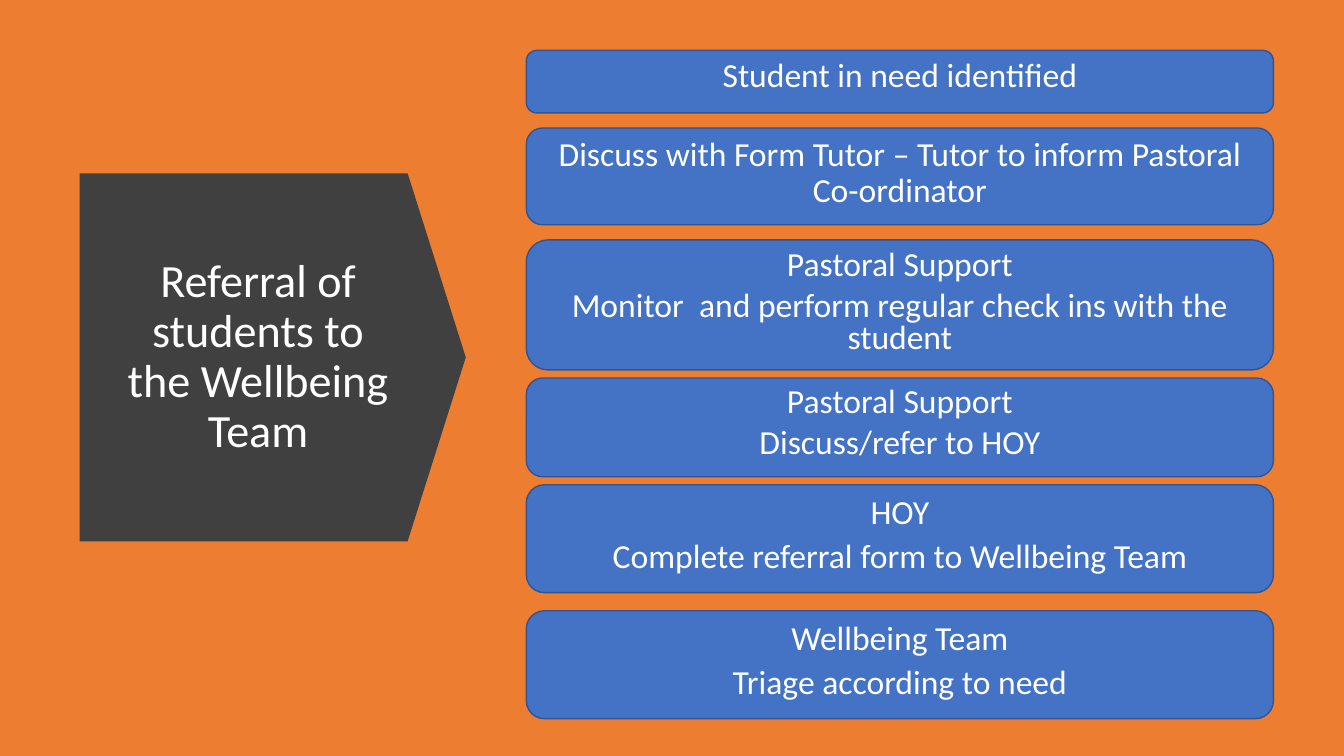
"""Builds the slide on referring students to the Wellbeing Team."""
import pptx
import pptx.util
import pptx.dml.color
import pptx.enum.shapes
import pptx.enum.text

Inches = pptx.util.Inches
RGBColor = pptx.dml.color.RGBColor
KIND = pptx.enum.shapes.MSO_SHAPE
ANCHOR = pptx.enum.text.MSO_ANCHOR
ALIGN = pptx.enum.text.PP_ALIGN

ORANGE = RGBColor(0xED, 0x7D, 0x31)
GREY = RGBColor(0x40, 0x40, 0x40)
BLUE = RGBColor(0x44, 0x72, 0xC4)
NAVY = RGBColor(0x32, 0x54, 0x91)
WHITE = RGBColor(0xFF, 0xFF, 0xFF)

LEFT, WIDTH = 5.22, 7.41
ALT, ROUND = KIND.FLOWCHART_ALTERNATE_PROCESS, KIND.ROUNDED_RECTANGLE
TITLE = "Referral of students to the Wellbeing Team"
STEPS = [
    (ALT, 0.5, 0.62, 0.9, ["Student in need identified"]),
    (ROUND, 1.27, 0.96, 0.9,
     ["Discuss with Form Tutor – Tutor to inform Pastoral Co-ordinator"]),
    (ALT, 2.38, 1.29, 0.8,
     ["Pastoral Support",
      "Monitor  and perform regular check ins with the student"]),
    (ALT, 3.75, 0.98, 0.8, ["Pastoral Support", "Discuss/refer to HOY"]),
    (ALT, 4.81, 1.07, 0.9, ["HOY", "Complete referral form to Wellbeing Team"]),
    (ALT, 6.06, 1.07, 0.9, ["Wellbeing Team", "Triage according to need"]),
]


def assign(item, form):
    for name, value in form.items():
        setattr(item, name, value)


def write(shape, lines, size, pitch, anchor):
    frame = shape.text_frame
    frame.text = "\n".join(lines)
    assign(frame, {"word_wrap": True, "vertical_anchor": anchor,
                   "auto_size": pptx.enum.text.MSO_AUTO_SIZE.NONE})
    for para in frame.paragraphs:
        assign(para, {"alignment": ALIGN.CENTER, "line_spacing": pitch,
                      "space_before": pptx.util.Pt(0),
                      "space_after": pptx.util.Pt(6)})
        for run in para.runs:
            assign(run.font, {"name": "Calibri", "size": pptx.util.Pt(size)})
            run.font.color.rgb = WHITE


def paint(item, color):
    item.fill.solid()
    item.fill.fore_color.rgb = color


def draw(slide, kind, box, color):
    shape = slide.shapes.add_shape(kind, *map(Inches, box))
    shape.shadow.inherit = False
    paint(shape, color)
    return shape


def add_arrow(slide):
    arrow = draw(slide, KIND.DOWN_ARROW, (0.88, 1.63, 3.65, 3.83), GREY)
    arrow.rotation = 270
    arrow.adjustments[0] = 1
    arrow.adjustments[1] = 0.158
    arrow.line.fill.background()


def add_title(slide):
    title = slide.shapes.title
    assign(title, {"left": Inches(1.12), "top": Inches(2.15),
                   "width": Inches(2.88), "height": Inches(2.79)})
    write(title, [TITLE], 33, 0.9, ANCHOR.MIDDLE)
    slide.shapes[-1].element.addnext(title.element)


def add_step(slide, kind, top, height, pitch, lines):
    step = draw(slide, kind, (LEFT, top, WIDTH, height), BLUE)
    step.line.color.rgb = NAVY
    step.line.width = pptx.util.Pt(1)
    write(step, lines, 24, pitch, ANCHOR.TOP)


def main():
    deck = pptx.Presentation()
    assign(deck, {"slide_width": Inches(13.33), "slide_height": Inches(7.5)})
    slide = deck.slides.add_slide(deck.slide_layouts[5])
    paint(slide.background, ORANGE)
    add_arrow(slide)
    add_title(slide)
    for step in STEPS:
        add_step(slide, *step)
    deck.save("out.pptx")


if __name__ == "__main__":
    main()
